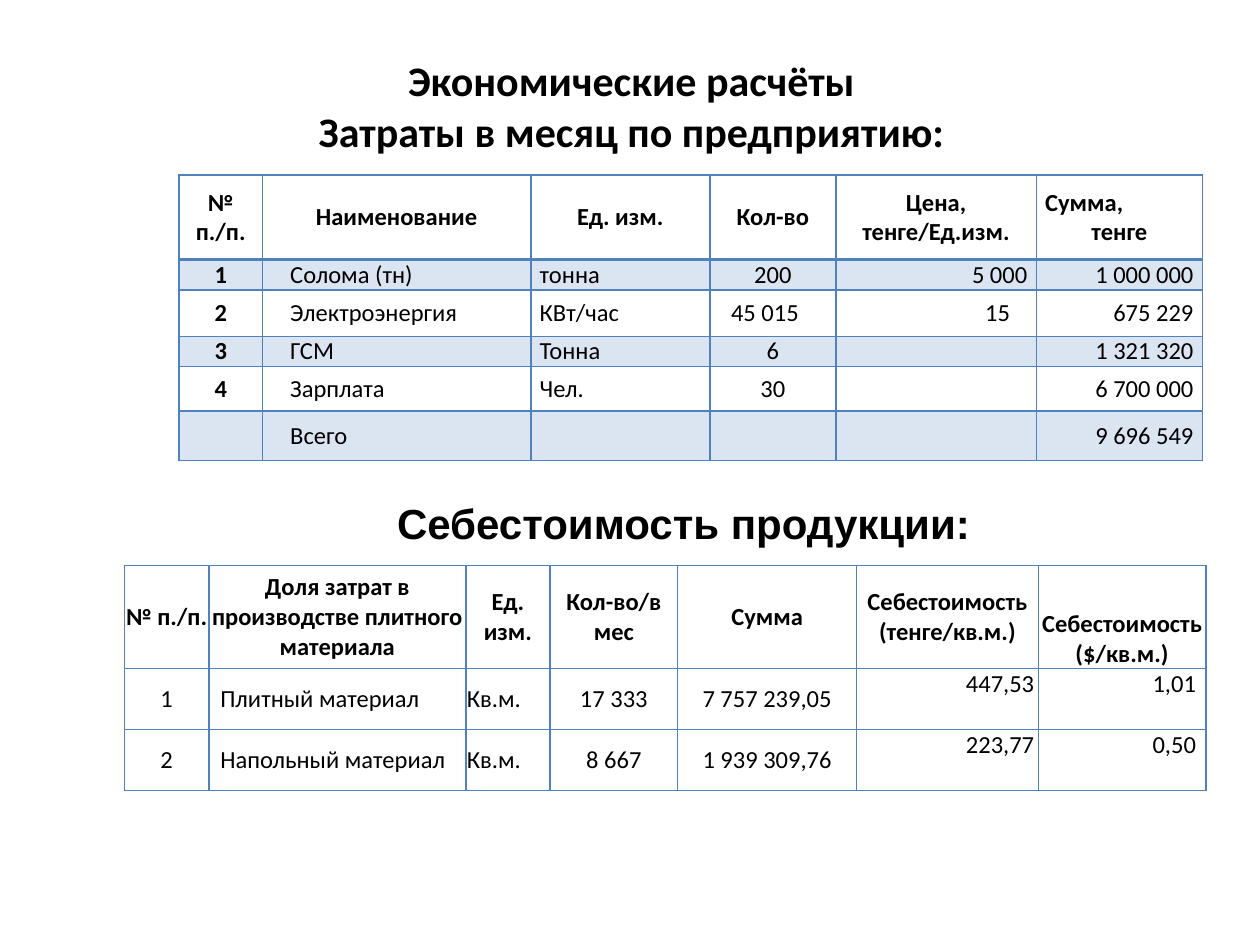
"""Build a slide with a monthly cost table and a unit cost table."""
from lxml.etree import SubElement
from pptx import Presentation
from pptx.dml.color import RGBColor
from pptx.enum.text import MSO_ANCHOR, MSO_AUTO_SIZE, PP_ALIGN
from pptx.oxml.ns import qn
from pptx.util import Cm, Pt

COLORS = {"text": "000000", "accent": "4F81BD"}
L, C, R = PP_ALIGN.LEFT, PP_ALIGN.CENTER, PP_ALIGN.RIGHT
TOP, MIDDLE, BOTTOM = MSO_ANCHOR.TOP, MSO_ANCHOR.MIDDLE, MSO_ANCHOR.BOTTOM

COSTS = [
    ["№ п./п.", "Наименование", "Ед. изм.", "Кол-во", "Цена, тенге/Ед.изм.", "Сумма,\nтенге"],
    ["1", "Солома (тн)", "тонна", "200", "5 000", "1 000 000"],
    ["2", "Электроэнергия", "КВт/час", "45 015", "15", "675 229"],
    ["3", "ГСМ", "Тонна", "6", "", "1 321 320"],
    ["4", "Зарплата", "Чел.", "30", "", "6 700 000"],
    ["", "Всего", "", "", "", "9 696 549"],
]
UNIT_COSTS = [
    ["№ п./п.", "Доля затрат в производстве плитного материала", "Ед. изм.", "Кол-во/в мес",
     "Сумма", "Себестоимость (тенге/кв.м.)", "Себестоимость ($/кв.м.)"],
    ["1", "Плитный материал", "Кв.м.", "17 333", "7 757 239,05", "447,53", "1,01"],
    ["2", "Напольный материал", "Кв.м.", "8 667", "1 939 309,76", "223,77", "0,50"],
]


def add_run(p, text, size, bold, font="Calibri"):
    r = p.add_run()
    r.text = text
    r.font.name = font
    r.font.size = Pt(size)
    r.font.bold = bold
    r.font.color.rgb = RGBColor.from_string(COLORS["text"])


def fill_heading(sp, box, lines, font):
    sp.left, sp.top, sp.width, sp.height = (Cm(v) for v in box)
    tf = sp.text_frame
    tf.word_wrap = True
    tf.auto_size = MSO_AUTO_SIZE.NONE
    tf.vertical_anchor = MIDDLE
    p = tf.paragraphs[0]
    p.alignment = C
    for i, line in enumerate(lines):
        if i:
            p.add_line_break()
        add_run(p, line, 24, True, font)


def set_borders(cell, bottom=1):
    tc_pr = cell._tc.get_or_add_tcPr()
    for side, width in (("L", 1), ("R", 1), ("T", 1), ("B", bottom)):
        ln = SubElement(tc_pr, qn(f"a:ln{side}"), w=str(Pt(width)))
        fill = SubElement(ln, qn("a:solidFill"))
        SubElement(fill, qn("a:srgbClr"), val=COLORS["accent"])


def set_fill(cell, banded):
    if not banded:
        cell.fill.background()
        return
    cell.fill.solid()
    cell.fill.fore_color.rgb = RGBColor.from_string(COLORS["accent"])
    color = cell._tc.tcPr.find(f"{qn('a:solidFill')}/{qn('a:srgbClr')}")
    SubElement(color, qn("a:alpha"), val="20000")


def set_text(cell, text, align, bold, anchor, left, right):
    cell.margin_left, cell.margin_right = Cm(left), Cm(right)
    cell.margin_top = cell.margin_bottom = 0
    cell.vertical_anchor = anchor
    if not text:
        SubElement(cell.text_frame.paragraphs[0]._p, qn("a:endParaRPr"), sz="1400")
        return
    for i, line in enumerate(text.split("\n")):
        p = cell.text_frame.paragraphs[0] if i == 0 else cell.text_frame.add_paragraph()
        p.alignment = align
        add_run(p, line, 14, bold)


def add_grid(s, left, top, widths, heights, rows, columns, margin,
             banded=False, bold_first=False, head_line=1):
    frame = s.shapes.add_table(len(rows), len(widths), Cm(left), Cm(top),
                               Cm(sum(widths)), Cm(sum(heights)))
    table = frame.table
    table.first_row = table.horz_banding = False
    for column, width in zip(table.columns, widths):
        column.width = Cm(width)
    for i, (row, height) in enumerate(zip(rows, heights)):
        table.rows[i].height = Cm(height)
        for j, text in enumerate(row):
            cell = table.cell(i, j)
            align, anchor, cell_left, cell_right = columns[j]
            if i == 0:
                set_text(cell, text, C, True, MIDDLE, margin, margin)
            else:
                set_text(cell, text, align, bold_first and j == 0, anchor, cell_left, cell_right)
            set_borders(cell, head_line if i == 0 else 1)
            set_fill(cell, banded and i % 2 == 1)
    return table


def main():
    prs = Presentation()
    prs.slide_width, prs.slide_height = Cm(25.4), Cm(19.05)
    s = prs.slides.add_slide(prs.slide_layouts[5])
    fill_heading(s.shapes.title, (1.3, 1.32, 22.86, 1.6),
                 ["Экономические расчёты", "Затраты в месяц по предприятию:"], "Calibri")
    fill_heading(s.shapes.add_textbox(0, 0, 0, 0), (3.3, 9.73, 20.96, 1.6),
                 ["Себестоимость продукции:"], "Arial")

    m = 0.18
    costs = add_grid(
        s, 3.61, 3.53, [1.68, 5.41, 3.61, 2.54, 4.04, 3.35], [1.71, 0.6, 0.94, 0.6, 0.9, 1],
        COSTS, [(C, MIDDLE, m, m), (L, MIDDLE, 0.56, m), (L, MIDDLE, m, m),
                (C, MIDDLE, m, m), (R, MIDDLE, m, m), (R, MIDDLE, m, m)],
        m, banded=True, bold_first=True, head_line=2)
    costs.cell(0, 5).text_frame.paragraphs[0].alignment = L
    costs.cell(2, 3).margin_right = Cm(0.5)
    costs.cell(2, 4).margin_right = Cm(0.53)

    m = 0.02
    unit_costs = add_grid(
        s, 2.51, 11.4, [1.7, 5.18, 1.7, 2.57, 3.61, 3.66, 3.38], [2.08, 1.23, 1.23],
        UNIT_COSTS, [(C, MIDDLE, m, m), (L, MIDDLE, 0.23, m), (L, MIDDLE, m, m),
                     (C, MIDDLE, m, m), (C, MIDDLE, m, m), (R, TOP, m, 0.08), (R, TOP, m, 0.2)], m)
    unit_costs.cell(0, 6).vertical_anchor = BOTTOM
    prs.save("out.pptx")


if __name__ == "__main__":
    main()
